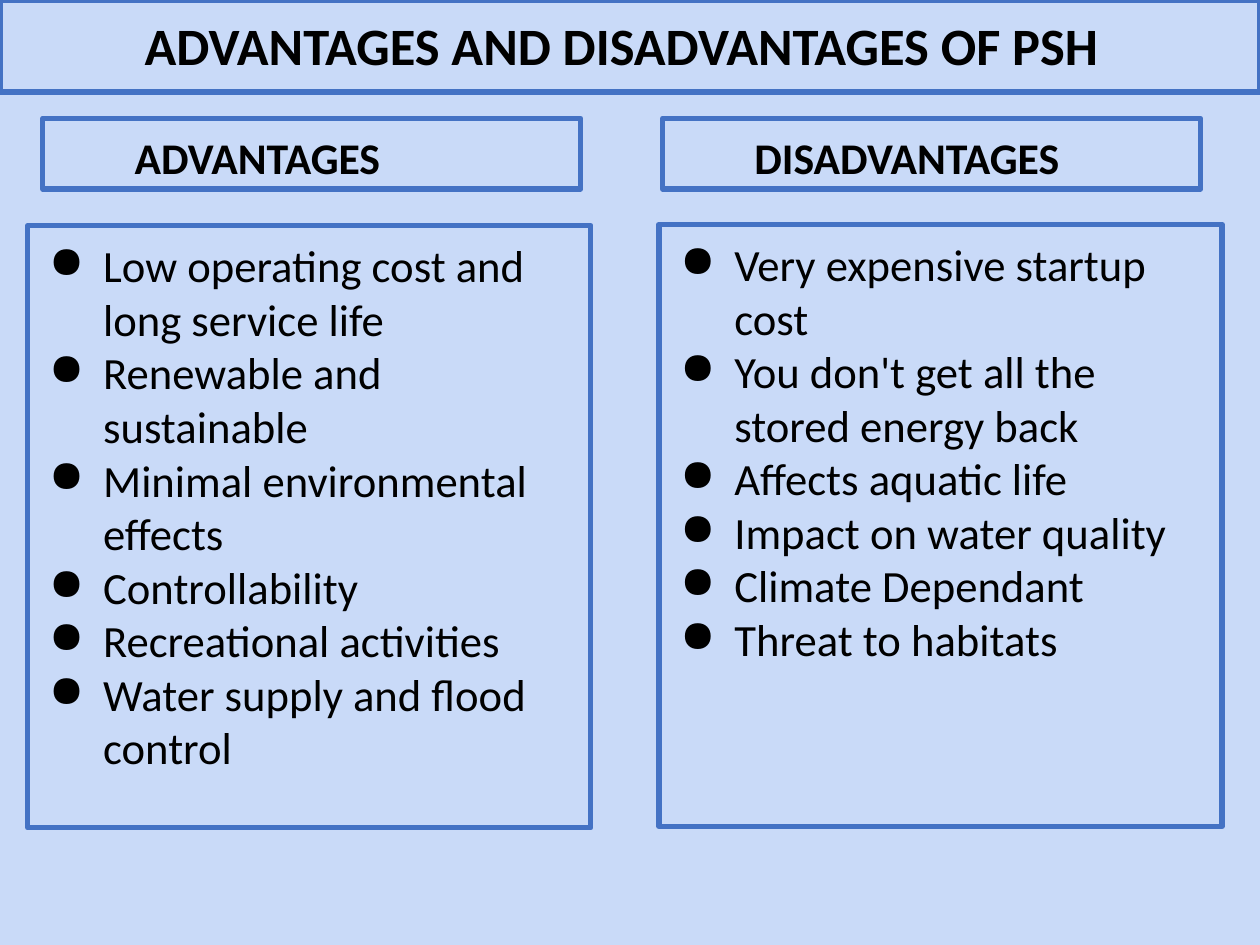
from lxml.etree import SubElement
from pptx import Presentation
from pptx.dml.color import RGBColor
from pptx.enum.shapes import MSO_SHAPE
from pptx.enum.text import MSO_ANCHOR, PP_ALIGN
from pptx.oxml.ns import qn
from pptx.util import Inches, Pt

COLORS = {"background": "C9DAF8", "border": "4472C4", "text": "000000"}

presentation = Presentation()
presentation.slide_width = Inches(10)
presentation.slide_height = Inches(7.5)
column = presentation.slide_width / 100
row = presentation.slide_height / 75

slide = presentation.slides.add_slide(presentation.slide_layouts[6])
slide.background.fill.solid()
slide.background.fill.fore_color.rgb = RGBColor.from_string(COLORS["background"])


def add_box(left, top, width, height):
    shape = slide.shapes.add_shape(
        MSO_SHAPE.RECTANGLE,
        int(left * column), int(top * row), int(width * column), int(height * row),
    )
    shape.shadow.inherit = False
    shape.fill.background()
    shape.line.color.rgb = RGBColor.from_string(COLORS["border"])
    shape.line.width = Pt(3)
    return shape


def write_text(shape, lines, size, bold=False, margin=0, indent=0, bullet=None):
    frame = shape.text_frame
    frame.word_wrap = True
    frame.vertical_anchor = MSO_ANCHOR.TOP
    frame.margin_left = frame.margin_right = int(column)
    frame.margin_top = frame.margin_bottom = int(row)
    frame.text = "\n".join(lines)
    for paragraph in frame.paragraphs:
        paragraph.alignment = PP_ALIGN.LEFT
        paragraph.font.name = "Calibri"
        paragraph.font.size = Pt(size)
        paragraph.font.bold = bold
        paragraph.font.color.rgb = RGBColor.from_string(COLORS["text"])
        for run in paragraph.runs:
            run.font.name = "Calibri"
            run.font.size = Pt(size)
            run.font.bold = bold
            run.font.color.rgb = RGBColor.from_string(COLORS["text"])
        properties = paragraph._p.get_or_add_pPr()
        properties.set("marL", str(int(margin * column)))
        properties.set("indent", str(int(indent * column)))
        if bullet:
            properties.remove(properties.find(qn("a:defRPr")))
            bullet_color = SubElement(properties, qn("a:buClr"))
            SubElement(bullet_color, qn("a:srgbClr"), val=COLORS["text"])
            SubElement(properties, qn("a:buChar"), char=bullet)


title = add_box(0, 0, 100, 7.3)
write_text(title, ["ADVANTAGES AND DISADVANTAGES OF PSH"], size=30, bold=True, margin=10.5)

sides = [
    ("ADVANTAGES", 3.4, 2.2, 17.9, [
        "Low operating cost and long service life",
        "Renewable and sustainable",
        "Minimal environmental effects",
        "Controllability",
        "Recreational activities",
        "Water supply and flood control",
    ]),
    ("DISADVANTAGES", 52.6, 52.3, 17.8, [
        "Very expensive startup cost",
        "You don't get all the stored energy back",
        "Affects aquatic life",
        "Impact on water quality",
        "Climate Dependant",
        "Threat to habitats",
    ]),
]
for heading, heading_left, list_left, list_top, points in sides:
    heading_box = add_box(heading_left, 9.4, 42.7, 5.6)
    write_text(heading_box, [heading], size=25, bold=True, margin=6.3)
    list_box = add_box(list_left, list_top, 44.7, 47.8)
    write_text(list_box, points, size=25.5, margin=5, indent=-4.3, bullet="●")

presentation.save("out.pptx")
